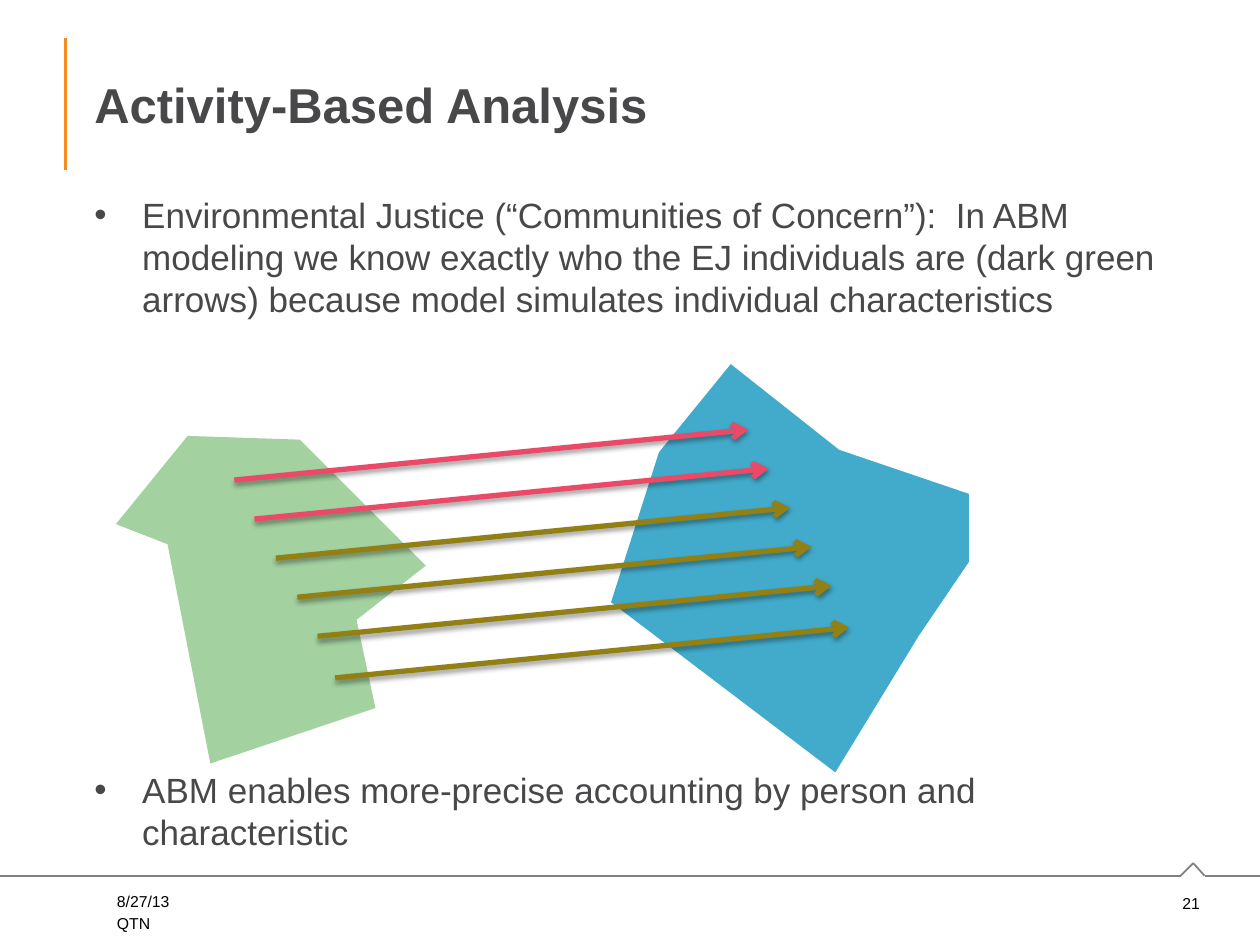
from lxml.etree import SubElement
from pptx import Presentation
from pptx.dml.color import RGBColor
from pptx.enum.shapes import MSO_CONNECTOR
from pptx.enum.text import MSO_ANCHOR, PP_ALIGN
from pptx.oxml.ns import qn
from pptx.util import Inches, Pt


def add_text(text, left, top, width, height, size, color, bold=False,
             align=PP_ALIGN.LEFT, anchor=MSO_ANCHOR.TOP, bullet=False):
    box = slide.shapes.add_textbox(Inches(left), Inches(top), Inches(width), Inches(height))
    frame = box.text_frame
    frame.word_wrap = True
    frame.vertical_anchor = anchor
    paragraph = frame.paragraphs[0]
    paragraph.text = text
    paragraph.alignment = align
    if bullet:
        properties = paragraph._p.get_or_add_pPr()
        properties.set("marL", str(Inches(0.38)))
        properties.set("indent", str(-Inches(0.38)))
        SubElement(properties, qn("a:buFont"), typeface="Arial")
        SubElement(properties, qn("a:buChar"), char="•")
    paragraph.font.name = "Arial"
    paragraph.font.size = Pt(size)
    paragraph.font.bold = bold
    paragraph.font.color.rgb = RGBColor.from_string(color)


def add_line(start, end, color, width):
    line = slide.shapes.add_connector(
        MSO_CONNECTOR.STRAIGHT, *[Inches(value) for value in (*start, *end)])
    line.line.color.rgb = RGBColor.from_string(color)
    line.line.width = Pt(width)
    return line, SubElement(line._element.spPr, qn("a:effectLst"))


presentation = Presentation()
presentation.slide_width = Inches(10)
presentation.slide_height = Inches(7.5)
slide = presentation.slides.add_slide(presentation.slide_layouts[6])

add_line((0.52, 0.3), (0.52, 1.35), "F68B1F", 1.5)
footer_rule = [(0, 6.95), (9.37, 6.95), (9.47, 6.85), (9.56, 6.95), (10, 6.95)]
for start, end in zip(footer_rule, footer_rule[1:]):
    add_line(start, end, "808080", 1)

add_text("21", 9.2, 7.04, 0.42, 0.25, 9, "000000",
         align=PP_ALIGN.RIGHT, anchor=MSO_ANCHOR.MIDDLE)
add_text("8/27/13", 0.83, 7.03, 2.27, 0.25, 9, "000000")
add_text("QTN", 0.83, 7.2, 2.27, 0.25, 9, "000000")

add_text("Activity-Based Analysis", 0.65, 0.3, 8.85, 1.05, 28, "48484A",
         bold=True, anchor=MSO_ANCHOR.MIDDLE)
bullets = [
    ("Environmental Justice (“Communities of Concern”):  In ABM modeling we know exactly "
     "who the EJ individuals are (dark green arrows) because model simulates individual "
     "characteristics", 1.49, 1.1),
    ("ABM enables more-precise accounting by person and characteristic", 6.05, 0.76),
]
for text, top, height in bullets:
    add_text(text, 0.65, top, 8.85, height, 20, "48484A", bullet=True)

zones = [
    ("A3D1A0", [(0.92, 4.16), (1.49, 3.46), (2.38, 3.49), (3.38, 4.49),
                (2.83, 4.92), (2.98, 5.62), (1.67, 6.06), (1.33, 4.32)]),
    ("42ABCB", [(5.23, 3.59), (5.8, 2.89), (6.66, 3.57), (7.69, 3.92),
                (7.69, 4.46), (7.29, 5.05), (6.63, 6.13), (4.85, 4.78)]),
]
for color, corners in zones:
    points = [(Inches(x), Inches(y)) for x, y in corners]
    outline = slide.shapes.build_freeform(*points[0])
    outline.add_line_segments(points[1:], close=True)
    zone = outline.convert_to_shape()
    zone.shadow.inherit = False
    zone.fill.solid()
    zone.fill.fore_color.rgb = RGBColor.from_string(color)
    zone.line.fill.background()

other_trips, justice_trips = "EA4A67", "928015"
trips = [
    (1.86, 3.81, other_trips), (2.02, 4.12, other_trips),
    (2.19, 4.43, justice_trips), (2.36, 4.74, justice_trips),
    (2.52, 5.05, justice_trips), (2.66, 5.38, justice_trips),
]
for x, y, color in trips:
    trip, effects = add_line((x, y), (x + 4.08, y - 0.4), color, 3)
    SubElement(trip.line._get_or_add_ln(), qn("a:tailEnd"), type="arrow")
    shadow = SubElement(effects, qn("a:outerShdw"), blurRad=str(Pt(3.1)),
                        dist=str(Pt(1.6)), dir="5400000", rotWithShape="0")
    shadow_color = SubElement(shadow, qn("a:srgbClr"), val="000000")
    SubElement(shadow_color, qn("a:alpha"), val="38000")

presentation.save("out.pptx")
